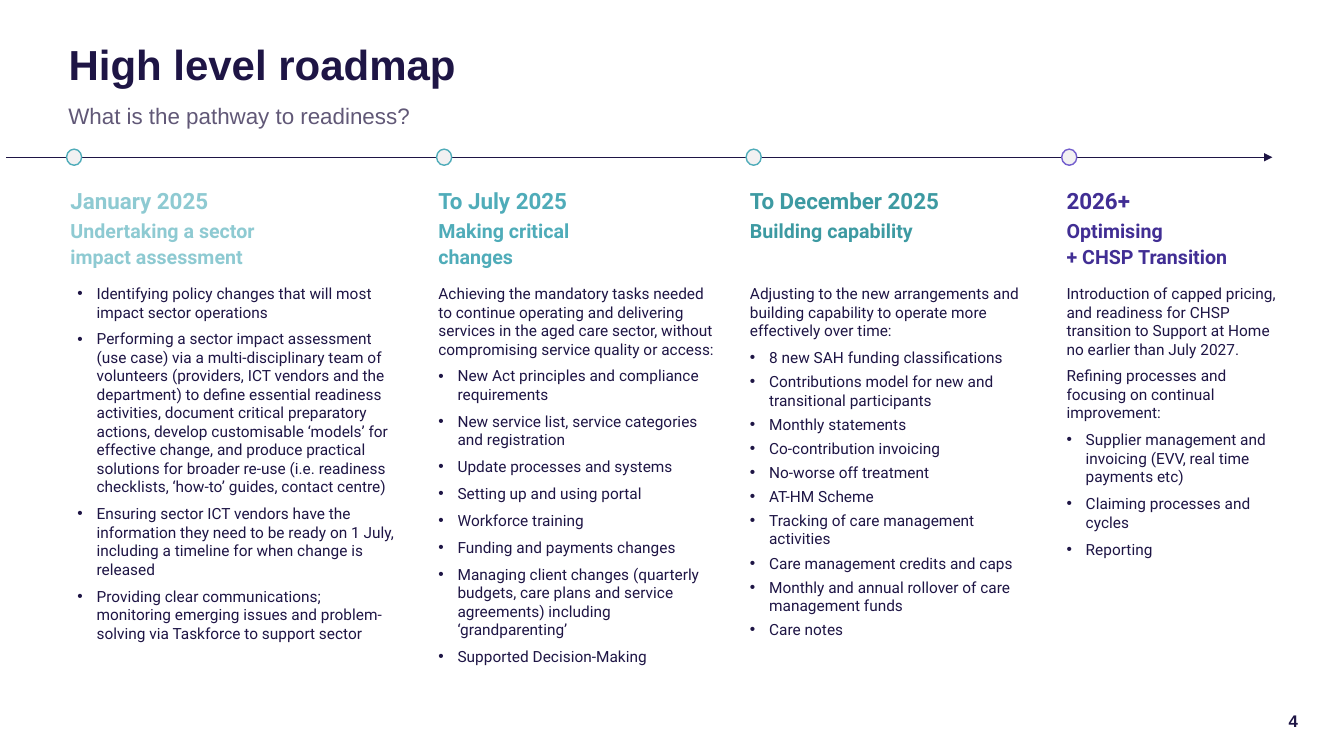
from dataclasses import dataclass

from lxml import etree
from pptx import Presentation
from pptx.dml.color import RGBColor
from pptx.enum.shapes import MSO_CONNECTOR, MSO_SHAPE
from pptx.enum.text import MSO_ANCHOR, MSO_AUTO_SIZE, PP_ALIGN
from pptx.oxml.ns import qn
from pptx.util import Inches, Pt

STRAIGHT = MSO_CONNECTOR.STRAIGHT
OVAL = MSO_SHAPE.OVAL
MIDDLE = MSO_ANCHOR.MIDDLE
NO_AUTOFIT = MSO_AUTO_SIZE.NONE
LEFT, RIGHT = PP_ALIGN.LEFT, PP_ALIGN.RIGHT
TITLE_ONLY = 5


@dataclass(frozen=True)
class Theme:
    heading_font: str = "Arial"
    body_font: str = "Roboto"
    ink: str = "1E1545"
    subtitle: str = "615877"
    marker_fill: str = "F2F1F2"
    teal: str = "4FACB9"
    pale_teal: str = "8ECAD2"
    deep_teal: str = "3D9AA2"
    violet: str = "735ECD"
    purple: str = "412E94"
    title_size: int = 30
    large_size: int = 16
    phase_size: int = 14
    number_size: int = 12
    body_size: int = 11


THEME = Theme()


@dataclass
class Stage:
    left: float
    width: float
    marker_left: float
    marker_color: str
    color: str
    date: str
    phase: str
    intro: list
    bullets: list
    bullet_gap: int = 6
    body_shift: float = 0


STAGES = [
    Stage(0.6, 3.31, 0.66, THEME.teal, THEME.pale_teal,
          "January 2025", "Undertaking a sector \vimpact assessment", [],
          ["Identifying policy changes that will most impact sector operations",
           "Performing a sector impact assessment (use case) via a multi-disciplinary team of "
           "volunteers (providers, ICT vendors and the department) to define essential readiness "
           "activities, document critical preparatory actions, develop customisable ‘models’ for "
           "effective change, and produce practical solutions for broader re-use (i.e. readiness "
           "checklists, ‘how-to’ guides, contact centre)",
           "Ensuring sector ICT vendors have the information they need to be ready on 1 July, "
           "including a timeline for when change is released",
           "Providing clear communications; monitoring emerging issues and problem-solving via "
           "Taskforce to support sector"],
          body_shift=0.07),
    Stage(4.25, 3, 4.33, THEME.teal, THEME.teal,
          "To July 2025", "Making critical \vchanges",
          ["Achieving the mandatory tasks needed to continue operating and delivering services in "
           "the aged care sector, without compromising service quality or access:"],
          ["New Act principles and compliance requirements",
           "New service list, service categories and registration",
           "Update processes and systems",
           "Setting up and using portal",
           "Workforce training",
           "Funding and payments changes",
           "Managing client changes (quarterly budgets, care plans and service agreements) "
           "including ‘grandparenting’",
           "Supported Decision-Making"]),
    Stage(7.34, 3, 7.4, THEME.teal, THEME.deep_teal,
          "To December 2025", "Building capability",
          ["Adjusting to the new arrangements and building capability to operate more "
           "effectively over time:"],
          ["8 new SAH funding classifications",
           "Contributions model for new and transitional participants",
           "Monthly statements",
           "Co-contribution invoicing",
           "No-worse off treatment",
           "AT-HM Scheme",
           "Tracking of care management activities",
           "Care management credits and caps",
           "Monthly and annual rollover of care management funds",
           "Care notes"],
          bullet_gap=4),
    Stage(10.48, 2.35, 10.53, THEME.violet, THEME.purple,
          "2026+", "Optimising\n+ CHSP Transition",
          ["Introduction of capped pricing, and readiness for CHSP transition to Support at Home "
           "no earlier than July 2027.",
           "Refining processes and focusing on continual improvement:"],
          ["Supplier management and invoicing (EVV, real time payments etc)",
           "Claiming processes and cycles",
           "Reporting"]),
]


def rgb(color):
    return RGBColor.from_string(color)


def style_text(frame, size, color, font, bold=False, line_spacing=None, align=LEFT):
    frame.word_wrap = True
    for paragraph in frame.paragraphs:
        paragraph.font.size = Pt(size)
        paragraph.font.name = font
        paragraph.font.bold = bold
        paragraph.font.color.rgb = rgb(color)
        paragraph.alignment = align
        if line_spacing:
            paragraph.line_spacing = line_spacing


def add_text(slide, left, top, width, height, text, *style, **options):
    box = slide.shapes.add_textbox(Inches(left), Inches(top), Inches(width), Inches(height))
    box.text_frame.text = text
    style_text(box.text_frame, *style, **options)
    return box.text_frame


def add_bullet(paragraph):
    properties = paragraph._p.get_or_add_pPr()
    properties.set("marL", str(Inches(0.19)))
    properties.set("indent", str(Inches(-0.19)))
    etree.SubElement(properties, qn("a:buFont")).set("typeface", THEME.heading_font)
    etree.SubElement(properties, qn("a:buChar")).set("char", "•")


def add_header(slide, left, top):
    title = slide.shapes.title
    title.left, title.top = Inches(left), Inches(top)
    title.width, title.height = Inches(10.63), Inches(0.6)
    frame = title.text_frame
    frame.text = "High level roadmap"
    frame.auto_size = NO_AUTOFIT
    frame.vertical_anchor = MIDDLE
    style_text(frame, THEME.title_size, THEME.ink, THEME.heading_font,
               bold=True, line_spacing=0.9)
    add_text(slide, left, top + 0.6, 7.04, 0.37, "What is the pathway to readiness?",
             THEME.large_size, THEME.subtitle, THEME.heading_font)


def add_timeline(slide, left, middle, right):
    axis = slide.shapes.add_connector(STRAIGHT, Inches(left), Inches(middle),
                                      Inches(right), Inches(middle))
    axis.line.color.rgb = rgb(THEME.ink)
    axis.line.width = Pt(0.5)
    etree.SubElement(axis.line._get_or_add_ln(), qn("a:tailEnd")).set("type", "triangle")
    etree.SubElement(axis._element.spPr, qn("a:effectLst"))
    for stage in STAGES:
        marker = slide.shapes.add_shape(OVAL, Inches(stage.marker_left), Inches(middle - 0.08),
                                        Inches(0.15), Inches(0.16))
        marker.shadow.inherit = False
        marker.fill.solid()
        marker.fill.fore_color.rgb = rgb(THEME.marker_fill)
        marker.line.color.rgb = rgb(stage.marker_color)
        marker.line.width = Pt(1)


def add_stage(slide, stage, top):
    heading = {"bold": True, "line_spacing": 1.1}
    add_text(slide, stage.left, top, stage.width, 0.37, stage.date,
             THEME.large_size, stage.color, THEME.body_font, **heading)
    add_text(slide, stage.left, top + 0.32, stage.width, 0.6, stage.phase,
             THEME.phase_size, stage.color, THEME.body_font, **heading)
    body = add_text(slide, stage.left + stage.body_shift, top + 0.99,
                    stage.width + stage.body_shift, 3.7,
                    "\n".join(stage.intro + stage.bullets),
                    THEME.body_size, THEME.ink, THEME.body_font)
    for index, paragraph in enumerate(body.paragraphs):
        is_bullet = index >= len(stage.intro)
        paragraph.space_after = Pt(stage.bullet_gap if is_bullet else 6)
        if is_bullet:
            add_bullet(paragraph)


def add_page_number(slide, left, top):
    frame = add_text(slide, left, top, 0.45, 0.4, "4", THEME.number_size, THEME.ink,
                     THEME.heading_font, bold=True, align=RIGHT)
    frame.vertical_anchor = MIDDLE


def main():
    presentation = Presentation()
    presentation.slide_width = Inches(13.33)
    presentation.slide_height = Inches(7.5)
    slide = presentation.slides.add_slide(presentation.slide_layouts[TITLE_ONLY])
    add_header(slide, 0.58, 0.36)
    add_timeline(slide, 0.06, 1.56, 12.62)
    for stage in STAGES:
        add_stage(slide, stage, 1.78)
    add_page_number(slide, 12.52, 6.95)
    presentation.save("out.pptx")


if __name__ == "__main__":
    main()
